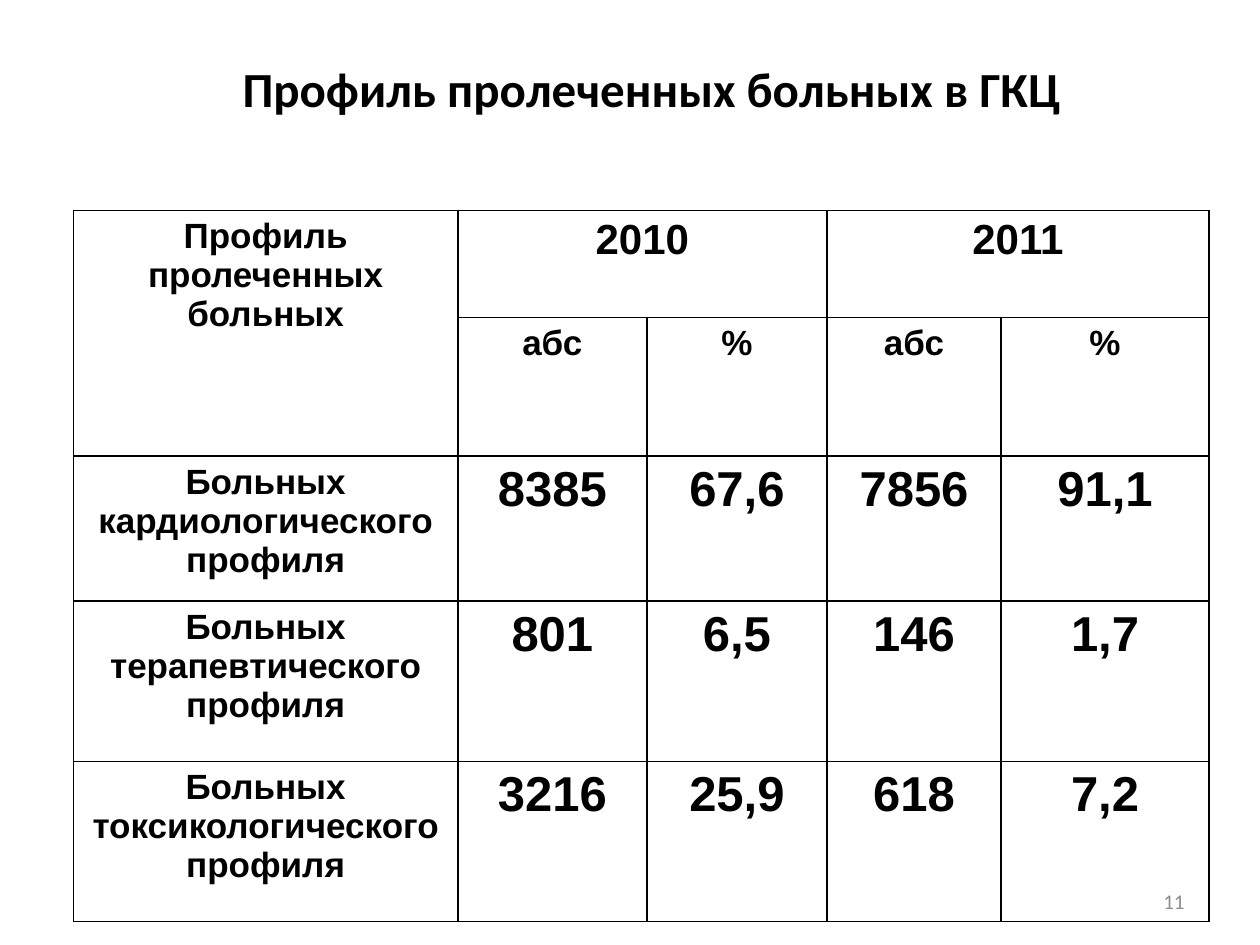
from lxml import etree
from pptx import Presentation
from pptx.dml.color import RGBColor
from pptx.enum.text import MSO_ANCHOR, PP_ALIGN
from pptx.oxml.ns import qn
from pptx.util import Cm, Pt

CENTER, RIGHT = PP_ALIGN.CENTER, PP_ALIGN.RIGHT
TOP, MIDDLE = MSO_ANCHOR.TOP, MSO_ANCHOR.MIDDLE
BLACK, GRAY = "000000", "8C8C8C"

COL_WIDTHS = [7.75, 3.81, 3.63, 3.51, 4.19]
ROW_HEIGHTS = [2.16, 2.62, 2.92, 3.23, 3.23]
ROWS = [
    ["Профиль пролеченных больных", "2010", "", "2011", ""],
    ["", "абс", "%", "абс", "%"],
    ["Больных кардиологического профиля", "8385", "67,6", "7856", "91,1"],
    ["Больных терапевтического профиля", "801", "6,5", "146", "1,7"],
    ["Больных токсикологического профиля", "3216", "25,9", "618", "7,2"],
]
LABEL_SIZE = 20
ROW_SIZES = [24, 20, 28, 28, 28]
MERGES = [((0, 0), (1, 0)), ((0, 1), (0, 2)), ((0, 3), (0, 4))]


def rgb(color):
    return RGBColor.from_string(color)


def write(tf, text, size, font="Arial", color=BLACK, bold=True, align=CENTER):
    p = tf.paragraphs[0]
    p.alignment = align
    r = p.add_run()
    r.text = text
    r.font.size = Pt(size)
    r.font.name = font
    r.font.bold = bold
    r.font.color.rgb = rgb(color)


def add_text(slide, box, text, anchor=TOP, **fmt):
    tf = slide.shapes.add_textbox(*(Cm(v) for v in box)).text_frame
    tf.word_wrap = True
    tf.vertical_anchor = anchor
    write(tf, text, **fmt)


def set_borders(cell, color=BLACK, width=1):
    tc_pr = cell._tc.get_or_add_tcPr()
    for side in ("a:lnL", "a:lnR", "a:lnT", "a:lnB"):
        ln = etree.SubElement(tc_pr, qn(side), w=str(Pt(width)))
        fill = etree.SubElement(ln, qn("a:solidFill"))
        etree.SubElement(fill, qn("a:srgbClr"), val=color)


def add_patient_table(slide, left, top):
    table = slide.shapes.add_table(
        len(ROWS), len(COL_WIDTHS), Cm(left), Cm(top),
        Cm(sum(COL_WIDTHS)), Cm(sum(ROW_HEIGHTS))).table
    table.first_row = table.horz_banding = False
    for col, width in zip(table.columns, COL_WIDTHS):
        col.width = Cm(width)
    for row, height in zip(table.rows, ROW_HEIGHTS):
        row.height = Cm(height)
    for start, end in MERGES:
        table.cell(*start).merge(table.cell(*end))
    for i, values in enumerate(ROWS):
        for j, value in enumerate(values):
            cell = table.cell(i, j)
            set_borders(cell)
            cell.fill.background()
            if value:
                write(cell.text_frame, value, ROW_SIZES[i] if j else LABEL_SIZE)


def main():
    prs = Presentation()
    prs.slide_width, prs.slide_height = Cm(25.4), Cm(19.05)
    slide = prs.slides.add_slide(prs.slide_layouts[6])
    add_text(slide, (18.2, 17.66, 5.93, 1.01), "11", anchor=MIDDLE,
             size=12, font="Calibri", color=GRAY, bold=False, align=RIGHT)
    add_patient_table(slide, 1.48, 4.24)
    add_text(slide, (1.7, 1.06, 22.86, 1.45), "Профиль пролеченных больных в ГКЦ",
             size=28, font="Calibri")
    prs.save("out.pptx")


if __name__ == "__main__":
    main()
